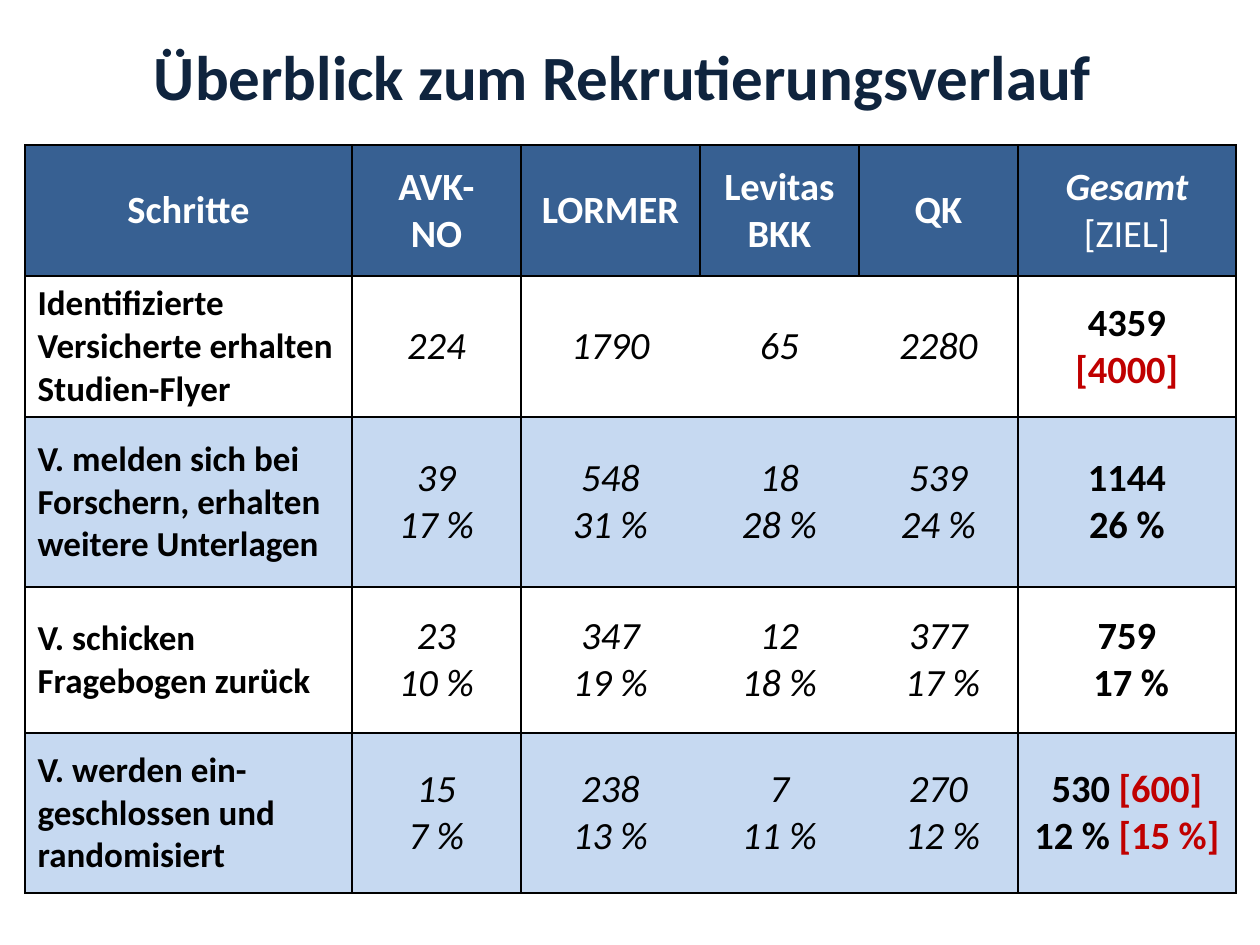
import pptx
import pptx.util
import pptx.dml.color
import pptx.enum.text
import lxml.etree

PX = 914400 / 126  # EMU per px
COLORS = {"title": "0F243E", "head": "376092", "white": "FFFFFF",
          "band": "C6D9F1", "black": "000000", "goal": "C00000"}
NS = "http://schemas.openxmlformats.org/drawingml/2006/main"
ALIGN = pptx.enum.text.PP_ALIGN
MIDDLE = pptx.enum.text.MSO_ANCHOR.MIDDLE


def style(run, size, color, bold=True, italic=False):
    font = run.font
    font.name, font.size = "Calibri", pptx.util.Pt(size)
    font.bold, font.italic = bold, italic
    font.color.rgb = pptx.dml.color.RGBColor.from_string(COLORS[color])


def border(cell, side, show):
    line = lxml.etree.SubElement(cell._tc.get_or_add_tcPr(), f"{{{NS}}}ln{side}", w="12700")
    if show:
        fill = lxml.etree.SubElement(line, f"{{{NS}}}solidFill")
        lxml.etree.SubElement(fill, f"{{{NS}}}srgbClr", val=COLORS["black"])
    else:
        lxml.etree.SubElement(line, f"{{{NS}}}noFill")


deck = pptx.Presentation()
deck.slide_width, deck.slide_height = round(1260 * PX), round(945 * PX)
slide = deck.slides.add_slide(deck.slide_layouts[5])

# Title
title = slide.shapes.title
title.left, title.top, title.width, title.height = [round(n * PX) for n in (0, 16, 1260, 118)]
title.fill.solid()
title.fill.fore_color.rgb = pptx.dml.color.RGBColor.from_string(COLORS["white"])
title.text_frame.text = "Überblick zum Rekrutierungsverlauf "
title.text_frame.vertical_anchor = MIDDLE
title.text_frame.paragraphs[0].alignment = ALIGN.CENTER
style(title.text_frame.paragraphs[0].runs[0], 36, "title")

# Table content: steps, four insurers, total with goal in brackets
ROWS = [
    ["Schritte", "AVK-\nNO", "LORMER", "Levitas BKK", "QK", "Gesamt\n[ZIEL]"],
    ["Identifizierte Versicherte erhalten Studien-Flyer",
     "224", "1790", "65", "2280", "4359\n[4000]"],
    ["V. melden sich bei Forschern, erhalten weitere Unterlagen",
     "39\n17 %", "548\n31 %", "18\n28 %", "539\n24 %", "1144\n26 %"],
    ["V. schicken Fragebogen zurück",
     "23\n10 %", "347\n19 %", "12\n18 %", "377\n 17 %", "759\n 17 %"],
    ["V. werden ein-geschlossen und randomisiert",
     "15\n7 %", "238\n13 %", "7\n11 %", "270\n 12 %", "530 [600]\n12 % [15 %]"],
]
WIDTHS = [327, 169, 179, 159, 159, 218]
HEIGHTS = [131, 120, 170, 146, 160]
LAST = len(WIDTHS) - 1

table = slide.shapes.add_table(len(ROWS), len(WIDTHS), round(25 * PX), round(145 * PX),
                               round(sum(WIDTHS) * PX), round(sum(HEIGHTS) * PX)).table
for col, width in zip(table.columns, WIDTHS):
    col.width = round(width * PX)
for row, height in zip(table.rows, HEIGHTS):
    row.height = round(height * PX)

for r, row in enumerate(ROWS):
    for c, text in enumerate(row):
        cell = table.cell(r, c)
        cell.vertical_anchor = MIDDLE

        # Borders: the three middle insurers share one open block below the header
        border(cell, "L", r == 0 or c not in (3, 4))
        border(cell, "R", r == 0 or c not in (2, 3))
        border(cell, "T", True)
        border(cell, "B", True)
        cell.fill.solid()
        shade = "head" if r == 0 else "white" if r % 2 else "band"
        cell.fill.fore_color.rgb = pptx.dml.color.RGBColor.from_string(COLORS[shade])

        # Text: bracketed goals get a run of their own
        frame = cell.text_frame
        frame.text = text
        for para in frame.paragraphs:
            para.alignment = ALIGN.LEFT if r and c == 0 else ALIGN.CENTER
            value, mark, goal = para.text.partition("[")
            parts = [part for part in (value, mark + goal) if part]
            para.runs[0].text = parts[0]
            for part in parts[1:]:
                para.add_run().text = part
            for run in para.runs:
                target = run.text.startswith("[")
                if r == 0:
                    style(run, 22, "white", not target, c == LAST and not target)
                elif c == 0:
                    style(run, 20, "black")
                elif c == LAST:
                    style(run, 22, "goal" if target else "black")
                else:
                    style(run, 22, "black", False, True)

deck.save("out.pptx")
